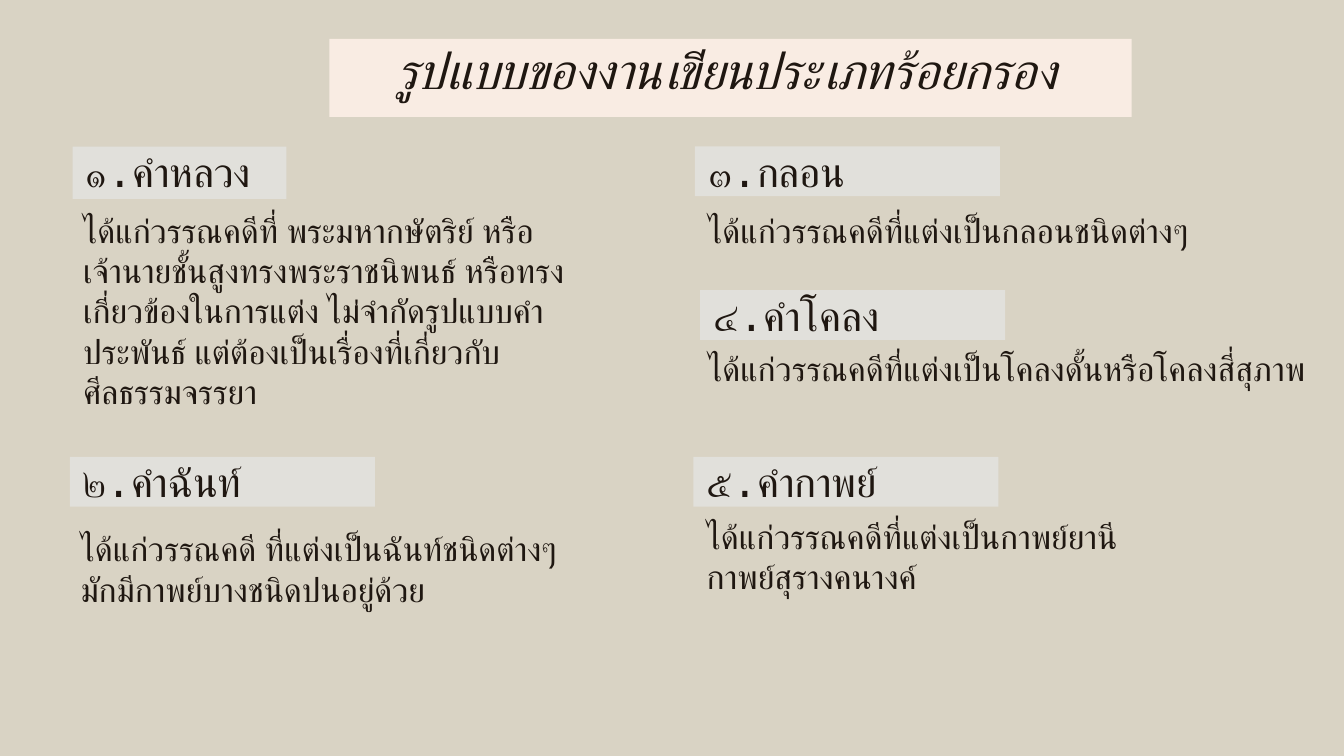
from pptx import Presentation
from pptx.dml.color import RGBColor
from pptx.enum import lang, shapes, text
from pptx.util import Inches, Pt

HEX = {"back": "D9D3C4", "banner": "F9ECE3", "label": "E1E0DB", "ink": "1F1711"}
MONO, SANS = "DejaVu Sans Mono", "Calibri"


def paint(fill, name):
    fill.solid()
    fill.fore_color.rgb = RGBColor.from_string(HEX[name])


def write(shape, lines, size, face, align=text.PP_ALIGN.LEFT, left=0.1, slant=False):
    """Fill a shape with one paragraph per line, set from its top edge."""
    frame = shape.text_frame
    frame.word_wrap = True
    frame.auto_size = text.MSO_AUTO_SIZE.NONE
    frame.vertical_anchor = text.MSO_ANCHOR.TOP
    frame.margin_left = Inches(left)
    frame.margin_top = 0
    frame.margin_right = frame.margin_bottom = Inches(0.1)
    for i, line in enumerate(lines):
        para = frame.paragraphs[0] if i == 0 else frame.add_paragraph()
        para.alignment = align
        run = para.add_run()
        run.text = line
        font = run.font
        font.name, font.size, font.italic = face, Pt(size), slant
        font.language_id = lang.MSO_LANGUAGE_ID.THAI
        font.color.rgb = RGBColor.from_string(HEX["ink"])


deck = Presentation()
deck.slide_width = Inches(10)
deck.slide_height = Inches(10) * 9 // 16
slide = deck.slides.add_slide(deck.slide_layouts[5])
paint(slide.background.fill, "back")

title = slide.shapes.title
title.left, title.top = Inches(2.45), Inches(0.29)
title.width, title.height = Inches(5.97), Inches(0.58)
paint(title.fill, "banner")
write(title, ["รูปแบบของงานเขียนประเภทร้อยกรอง"], 27, MONO,
      text.PP_ALIGN.CENTER, slant=True)

# label, label box, body lines, body box, body left inset
forms = [
    ("๑.คำหลวง", (0.54, 1.09, 1.59, 0.39),
     ["ได้แก่วรรณคดีที่ พระมหากษัตริย์ หรือเจ้านายชั้นสูงทรงพระราชนิพนธ์ "
      "หรือทรงเกี่ยวข้องในการแต่ง ไม่จำกัดรูปแบบคำประพันธ์ "
      "แต่ต้องเป็นเรื่องที่เกี่ยวกับ", "ศีลธรรมจรรยา"],
     (0.52, 1.56, 3.83, 1.48), 0.1),
    ("๒.คำฉันท์", (0.52, 3.4, 2.27, 0.37),
     ["ได้แก่วรรณคดี ที่แต่งเป็นฉันท์ชนิดต่างๆ", "มักมีกาพย์บางชนิดปนอยู่ด้วย"],
     (0.45, 3.93, 4.23, 0.94), 0.15),
    ("๓.กลอน", (5.17, 1.09, 2.27, 0.37),
     ["ได้แก่วรรณคดีที่แต่งเป็นกลอนชนิดต่างๆ"], (5.17, 1.56, 4.21, 0.49), 0.1),
    ("๕.คำกาพย์", (5.16, 3.4, 2.27, 0.37),
     ["ได้แก่วรรณคดีที่แต่งเป็นกาพย์ยานี กาพย์สุรางคนางค์"],
     (5.16, 3.84, 3.59, 0.76), 0.1),
    ("๔.คำโคลง", (5.21, 2.16, 2.27, 0.37),
     ["ได้แก่วรรณคดีที่แต่งเป็นโคลงดั้นหรือโคลงสี่สุภาพ"],
     (5.17, 2.59, 4.74, 0.45), 0.1),
]
for name, spot, lines, area, inset in forms:
    group = slide.shapes.add_group_shape()
    label = group.shapes.add_shape(shapes.MSO_SHAPE.RECTANGLE, *map(Inches, spot))
    label.shadow.inherit = False
    paint(label.fill, "label")
    label.line.fill.background()
    write(label, [name], 22, MONO)
    body = group.shapes.add_textbox(*map(Inches, area))
    write(body, lines, 18, SANS, left=inset)

deck.save("out.pptx")
